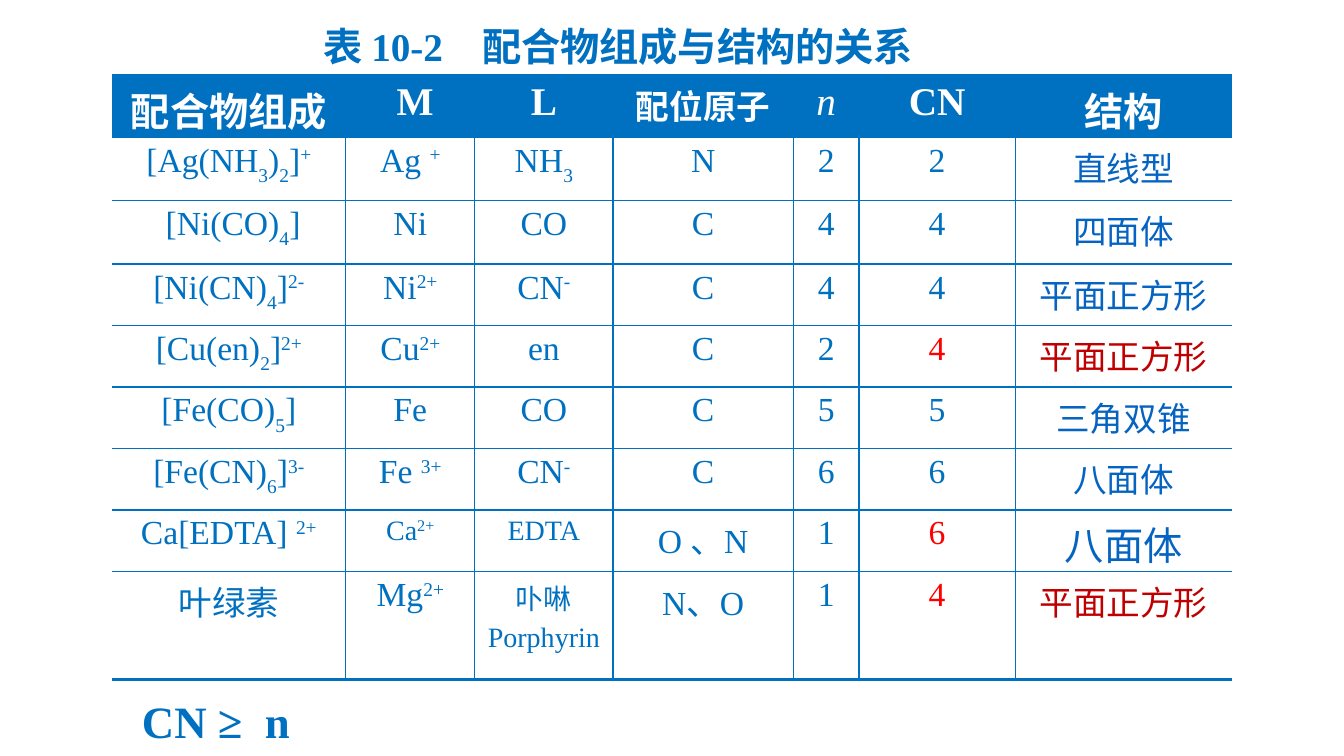
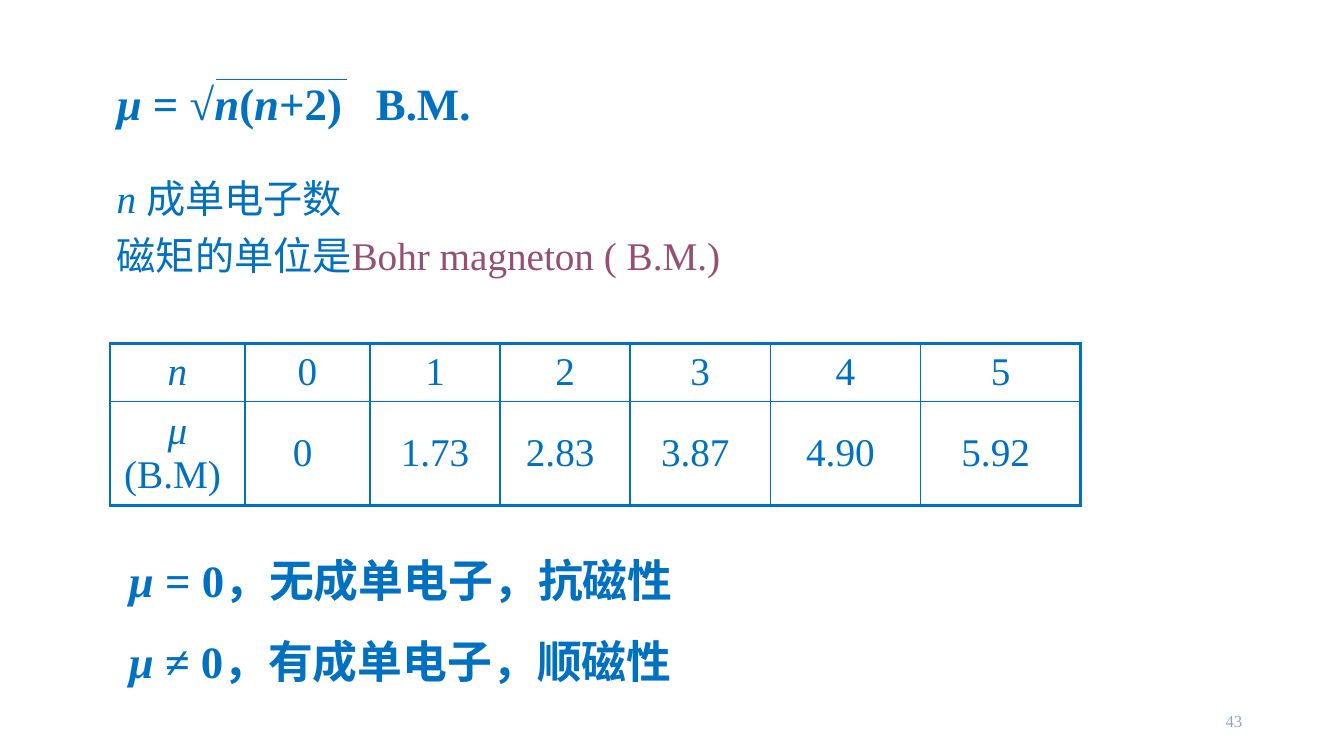
from lxml import etree
from pptx import Presentation
from pptx import util as u
from pptx.dml.color import RGBColor
from pptx.enum import shapes, text
from pptx.oxml.ns import qn

PX = 9144
FONT = "Times New Roman"
HUES = {"blue": "0070C0", "link": "0563C1", "red": "FF0000", "dark": "C00000",
        "plum": "954F72", "pale": "8CA4D2", "white": "FFFFFF"}
MID = text.MSO_ANCHOR.MIDDLE
LEFT, MIDST, RIGHT = text.PP_ALIGN.LEFT, text.PP_ALIGN.CENTER, text.PP_ALIGN.RIGHT
BASES = {"_": "-30000", "^": "30000"}

HEADS = ["配合物组成", " M", "L", "配位原子", "/n", "CN", "结构"]
ROWS = [
    ["[Ag(NH|_3|)|_2|]|^+", "Ag |^+", "NH|_3", "N", "2", "2", "直线型"],
    [" [Ni(CO)|_4|]", "Ni", "CO", "C", "4", "4", "四面体"],
    ["[Ni(CN)|_4|]|^2-", "Ni|^2+", "CN|^-", "C", "4", "4", "平面正方形"],
    ["[Cu(en)|_2|]|^2+", "Cu|^2+", "en", "C", "2", "4", "平面正方形"],
    ["[Fe(CO)|_5|]", "Fe", "CO", "C", "5", "5", "三角双锥"],
    ["[Fe(CN)|_6|]|^3-", "Fe |^3+", "CN|^-", "C", "6", "6", "八面体"],
    ["Ca[EDTA] |^2+", "Ca|^2+", "EDTA", "O 、N", "1", "6", "八面体"],
    ["叶绿素", "Mg|^2+", "卟啉\nPorphyrin", "N、O", "1", "4", "平面正方形"],
]
TINTS = {(4, 5): "red", (7, 5): "red", (8, 5): "red", (4, 6): "dark", (8, 6): "dark"}
SIZES = {(0, 3): 24, (7, 1): 20, (7, 2): 20, (7, 6): 28, (8, 2): 20}
MOMENTS = [["/n", "0", "1", "2", "3", "4", "5"],
           ["/μ| (B.M) ", "0 ", "1.73", "2.83 ", "3.87 ", "4.90 ", "5.92 "]]


def px(num):
    """Turn px into EMU."""
    return u.Emu(num * PX)


def rgb(name):
    """Look up a named colour."""
    return RGBColor.from_string(HUES[name])


def write(para, marks, size, hue="blue", bold=False, font=FONT):
    """Add runs split at |, led by _ for low, ^ for high, / for italic."""
    for part in marks.split("|"):
        sign = part[0] if part[0] in "_^/" else ""
        run = para.add_run()
        run.text = part[len(sign):]
        run.font.size = u.Pt(size)
        run.font.name = font
        run.font.bold = bold
        run.font.italic = sign == "/"
        run.font.color.rgb = rgb(hue)
        if sign in BASES:
            run._r.get_or_add_rPr().set("baseline", BASES[sign])


def tab(para, pos):
    """Set one left tab stop."""
    stops = etree.SubElement(para._p.get_or_add_pPr(), qn("a:tabLst"))
    etree.SubElement(stops, qn("a:tab"), pos=str(px(pos)), algn="l")


def frame(slide, box, lines, size, hue="blue", bold=False, align=LEFT,
          anchor=text.MSO_ANCHOR.TOP, pitch=None, gap=0, stop=None):
    """Place a text box with a list of marked lines."""
    body = slide.shapes.add_textbox(*map(px, box)).text_frame
    body.word_wrap = True
    body.vertical_anchor = anchor
    for num, line in enumerate(lines):
        para = body.add_paragraph() if num else body.paragraphs[0]
        para.alignment = align
        if pitch:
            para.line_spacing = pitch
        if num and gap:
            para.space_before = u.Pt(gap)
        if stop:
            tab(para, stop)
        write(para, line, size, hue, bold)
    return body


def edge(cell, widths):
    """Draw the left, right, top and bottom borders of a cell."""
    props = cell._tc.get_or_add_tcPr()
    for num, (side, width) in enumerate(zip("LRTB", widths)):
        line = etree.Element(qn("a:ln" + side), w=str(u.Pt(width)))
        if width:
            fill = etree.SubElement(line, qn("a:solidFill"))
            etree.SubElement(fill, qn("a:srgbClr"), val=HUES["blue"])
        else:
            etree.SubElement(line, qn("a:noFill"))
        props.insert(num, line)


def grid(slide, spot, cols, rows, side):
    """Place a ruled table whose outer sides have the given width."""
    size = sum(cols), sum(rows)
    table = slide.shapes.add_table(len(rows), len(cols), *map(px, spot + size)).table
    table.first_row = table.horz_banding = False
    for col, width in zip(table.columns, cols):
        col.width = px(width)
    for row, height in zip(table.rows, rows):
        row.height = px(height)
    for r in range(len(rows)):
        for c in range(len(cols)):
            cell = table.cell(r, c)
            cell.fill.background()
            edge(cell, (1 if c else side, side if c == len(cols) - 1 else 1,
                        1 if r else 2.25, 2.25 if r == len(rows) - 1 else 1))
    return table


def bonds(slide, spot):
    """Fill the table of complexes."""
    table = grid(slide, spot, (232, 128, 137, 179, 65, 155, 215),
                 (61, 63, 63, 61, 61, 61, 61, 61, 107), 0)
    for r, row in enumerate([HEADS] + ROWS):
        for c, words in enumerate(row):
            cell = table.cell(r, c)
            hue = TINTS.get((r, c), "link" if c == 6 else "blue")
            if r == 0:
                cell.fill.solid()
                cell.fill.fore_color.rgb = rgb("blue")
                hue = "white"
            size = SIZES.get((r, c), 24 if r else 28)
            for num, line in enumerate(words.split("\n")):
                para = cell.text_frame.add_paragraph() if num else cell.text_frame.paragraphs[0]
                para.alignment = MIDST
                if num:
                    para.space_before = u.Pt(4)
                write(para, line, size, hue, r == 0 and c != 4,
                      "Cabin" if line == "卟啉" else FONT)


def spins(slide, spot):
    """Fill the table of magnetic moments."""
    table = grid(slide, spot, (134, 124, 129, 129, 139, 149, 159), (57, 103), 2.25)
    for r, row in enumerate(MOMENTS):
        for c, words in enumerate(row):
            cell = table.cell(r, c)
            cell.vertical_anchor = MID
            para = cell.text_frame.paragraphs[0]
            para.alignment = MIDST
            write(para, words, 28)


def root(slide, left, top):
    """Place the moment formula with the bar of its root."""
    frame(slide, (left, top, 852, 125), ["/μ |= √|/n|(|/n|+2)\tB.M."], 32,
          bold=True, anchor=MID, pitch=0.9, stop=257)
    bar = slide.shapes.add_connector(shapes.MSO_CONNECTOR.STRAIGHT, *map(
        px, (left + 108, top + 36, left + 238, top + 36)))
    bar.line.color.rgb = rgb("blue")
    bar.line.width = u.Pt(0.5)
    etree.SubElement(bar._element.spPr, qn("a:effectLst"))


def first(slide):
    """Build the slide on composition and structure."""
    frame(slide, (187, 27, 852, 43), ["表 10-2　配合物组成与结构的关系"], 28,
          bold=True, align=MIDST, anchor=MID, pitch=0.9)
    bonds(slide, (111, 75))
    frame(slide, (131, 683, 717, 63), ["CN ≥\tn"], 32, bold=True, stop=122)


def second(slide):
    """Build the slide on magnetic moments."""
    root(slide, 106, 43)
    spins(slide, (109, 341))
    notes = frame(slide, (106, 168, 780, 128), ["/n |成单电子数", "磁矩的单位是"], 28, gap=7)
    write(notes.paragraphs[1], "Bohr magneton ( B.M.)", 28, "plum")
    frame(slide, (942, 695, 300, 40), ["43"], 12, "pale", align=RIGHT, anchor=MID)
    frame(slide, (118, 517, 602, 162),
          ["/μ |= 0，无成单电子，抗磁性", "/μ |≠ 0，有成单电子，顺磁性"], 32,
          bold=True, pitch=1.5)


def main():
    """Build and save the deck."""
    deck = Presentation()
    deck.slide_width, deck.slide_height = px(1333), px(750)
    for build in (first, second):
        build(deck.slides.add_slide(deck.slide_layouts[6]))
    deck.save("out.pptx")


if __name__ == "__main__":
    main()
